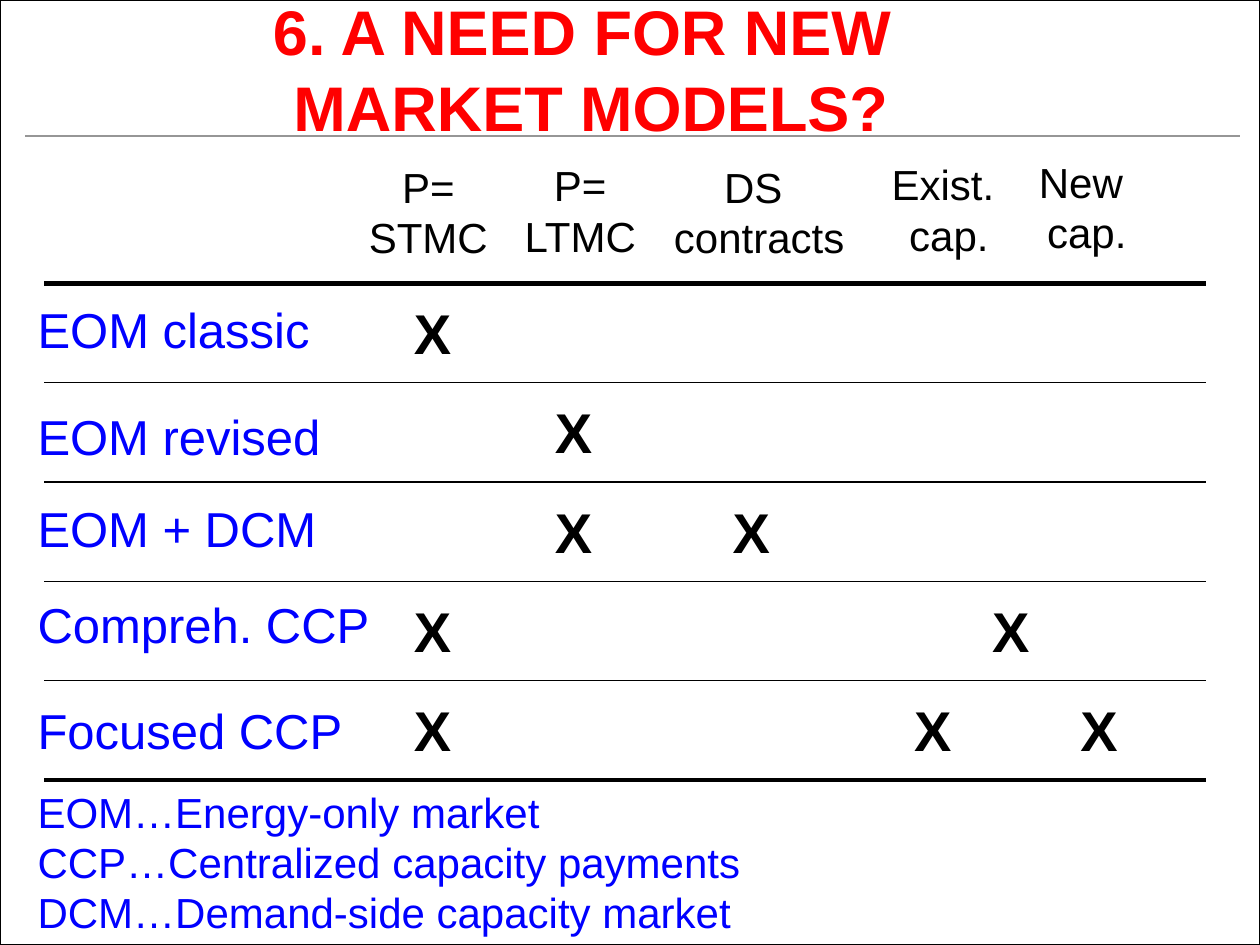
from dataclasses import dataclass

from lxml.etree import SubElement
from pptx import Presentation
from pptx.dml.color import RGBColor
from pptx.enum.shapes import MSO_CONNECTOR as Connector, MSO_SHAPE as Shape
from pptx.enum.text import MSO_ANCHOR as Anchor, MSO_AUTO_SIZE as AutoSize, PP_ALIGN as Align
from pptx.oxml.ns import qn
from pptx.util import Inches, Pt


@dataclass(frozen=True)
class Theme:
    """Colours, type sizes and line widths of the slide."""

    font: str = "Arial"
    red: RGBColor = RGBColor(255, 0, 0)
    blue: RGBColor = RGBColor(0, 0, 255)
    black: RGBColor = RGBColor(0, 0, 0)
    white: RGBColor = RGBColor(255, 255, 255)
    grey: RGBColor = RGBColor(150, 150, 150)
    title: int = 36
    mark: int = 32
    label: int = 28
    small: int = 24
    thin: float = 0.75
    thick: float = 2.5


THEME = Theme()
TABLE_LEFT, TABLE_RIGHT, TABLE_TOP, ROW_HEIGHT = 0.35, 9.57, 2.25, 0.788
TEXT_LEFT = 0.2
MARK_SIZE = (0.63, 0.64)
MARK_LEFT = {"STMC": 3.18, "LTMC": 4.3, "DS": 5.71, "Exist": 7.15, "Both": 7.77, "New": 8.47}
HEADERS = [
    ("P=\nSTMC", 2.82, 1.23, 1.16),
    ("P=\nLTMC", 4.06, 1.22, 1.09),
    ("DS \ncontracts", 5.24, 1.23, 1.57),
    ("Exist. \ncap.", 6.97, 1.21, 1.12),
    ("New \ncap.", 8.14, 1.19, 0.97),
]
MODELS = [
    ("EOM classic", 2.33, 2.38, ["STMC"]),
    ("EOM revised", 3.18, 2.47, ["LTMC"]),
    ("EOM + DCM", 3.91, 2.44, ["LTMC", "DS"]),
    ("Compreh. CCP", 4.67, 2.87, ["STMC", "Both"]),
    ("Focused CCP", 5.51, 2.65, ["STMC", "Exist", "New"]),
]
LEGEND = [
    ("EOM…Energy-only market", 4.32),
    ("CCP…Centralized capacity payments", 5.93),
    ("DCM…Demand-side capacity market", 5.76),
]


def write(box, text, size, color, align=Align.LEFT, bold=False):
    """Put one formatted paragraph into a box."""
    para = box.text_frame.paragraphs[0]
    para.text = text
    para.alignment = align
    para.font.size = Pt(size)
    for span in para.runs:
        span.font.name = THEME.font
        span.font.size = Pt(size)
        span.font.bold = bold
        span.font.color.rgb = color


def add_text(page, text, left, top, width, height, size, color, **style):
    """Add an unwrapped text box that fits its text."""
    box = page.shapes.add_textbox(Inches(left), Inches(top), Inches(width), Inches(height))
    box.text_frame.word_wrap = False
    box.text_frame.auto_size = AutoSize.SHAPE_TO_FIT_TEXT
    write(box, text, size, color, **style)


def add_rule(page, left, right, top, color, width):
    """Add a horizontal line without a shadow."""
    rule = page.shapes.add_connector(
        Connector.STRAIGHT, Inches(left), Inches(top), Inches(right), Inches(top)
    )
    rule.line.color.rgb = color
    rule.line.width = Pt(width)
    SubElement(rule.element.spPr, qn("a:effectLst"))


def add_frame(page, deck):
    """Add the outlined white page and the line below the title."""
    frame = page.shapes.add_shape(Shape.RECTANGLE, 0, 0, deck.slide_width, deck.slide_height)
    frame.shadow.inherit = False
    frame.fill.solid()
    frame.fill.fore_color.rgb = THEME.white
    frame.line.color.rgb = THEME.black
    frame.line.width = Pt(THEME.thin)
    add_rule(page, 0.2, 9.84, 1.08, THEME.grey, THEME.thin)


def set_title(page, text):
    """Place the title placeholder in front of the frame and fill it."""
    title = page.shapes.title
    title.element.getparent().append(title.element)
    title.left, title.top = Inches(0.28), Inches(0.08)
    title.width, title.height = Inches(8.82), Inches(0.92)
    title.text_frame.vertical_anchor = Anchor.MIDDLE
    title.text_frame.auto_size = AutoSize.NONE
    write(title, text, THEME.title, THEME.red, align=Align.CENTER, bold=True)


def add_matrix(page):
    """Add the rules, headers, model names and marks of the comparison."""
    for row in range(len(MODELS) + 1):
        width = THEME.thick if row in (0, len(MODELS)) else THEME.thin
        add_rule(page, TABLE_LEFT, TABLE_RIGHT, TABLE_TOP + row * ROW_HEIGHT, THEME.black, width)
    for text, left, top, width in HEADERS:
        add_text(page, text, left, top, width, 0.91, THEME.small, THEME.black, align=Align.CENTER)
    for row, (name, top, width, marks) in enumerate(MODELS):
        add_text(page, name, TEXT_LEFT, top, width, 0.57, THEME.label, THEME.blue)
        mark_top = TABLE_TOP + row * ROW_HEIGHT + 0.07
        for column in marks:
            add_text(page, "X ", MARK_LEFT[column], mark_top, *MARK_SIZE,
                     THEME.mark, THEME.black, align=Align.CENTER, bold=True)


def add_legend(page):
    """Add the explanations of the abbreviations."""
    for row, (text, width) in enumerate(LEGEND):
        add_text(page, text, TEXT_LEFT, 6.19 + row * 0.4, width, 0.5, THEME.small, THEME.blue)


def main():
    """Build and save the slide."""
    deck = Presentation()
    deck.slide_width, deck.slide_height = Inches(10), Inches(7.5)
    page = deck.slides.add_slide(deck.slide_layouts[5])
    add_frame(page, deck)
    set_title(page, "6. A NEED FOR NEW \nMARKET MODELS?")
    add_matrix(page)
    add_legend(page)
    deck.save("out.pptx")


if __name__ == "__main__":
    main()
